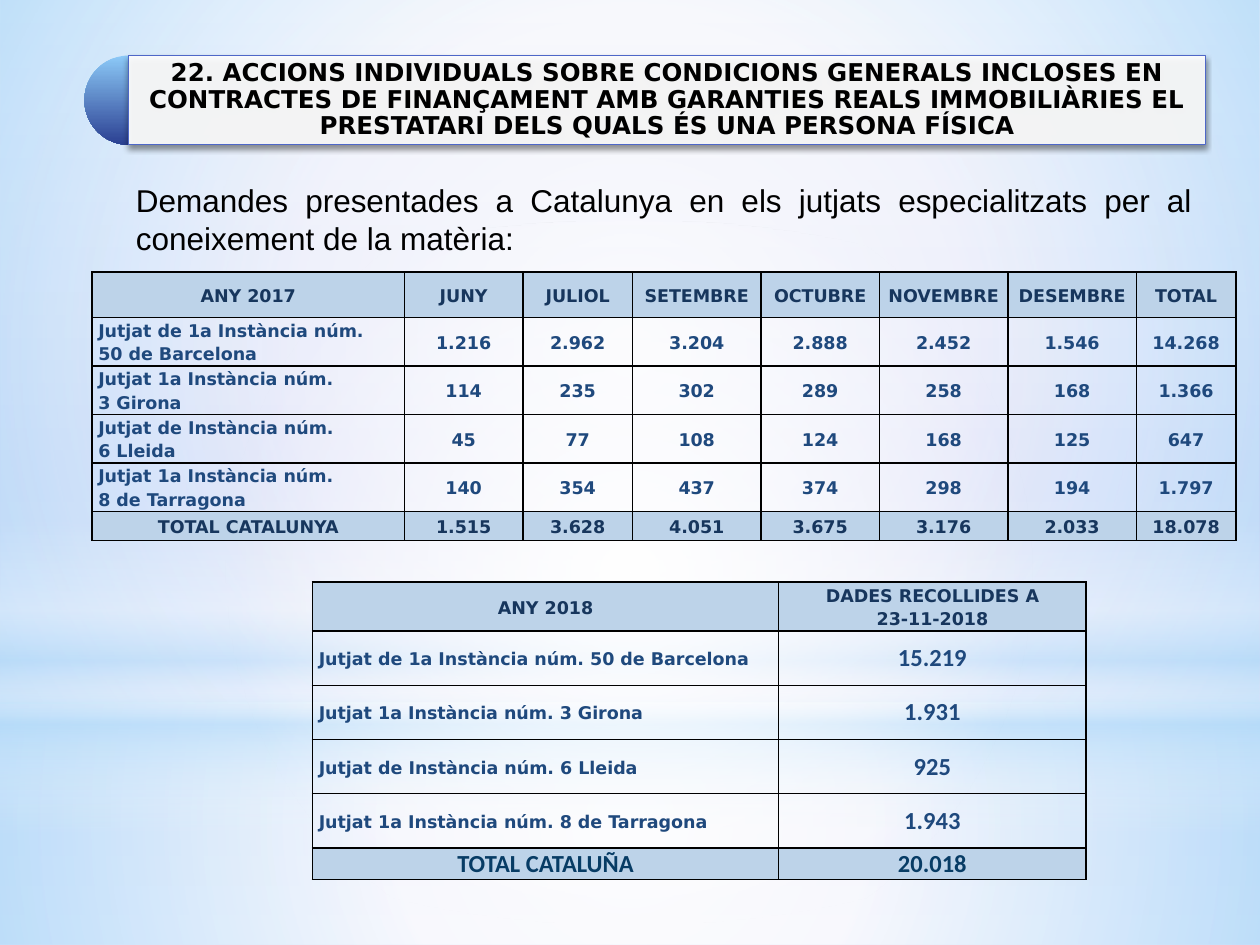
from copy import deepcopy
from dataclasses import dataclass
from typing import NamedTuple, Optional

from lxml.etree import SubElement
from pptx import Presentation
from pptx.dml.color import RGBColor
from pptx.enum.shapes import MSO_SHAPE as Preset
from pptx.enum.text import MSO_ANCHOR as Anchor, MSO_AUTO_SIZE as AutoSize, PP_ALIGN as Align
from pptx.oxml.ns import qn
from pptx.util import Inches, Pt

UNIT = Inches(10) // 1000  # the slide is a grid of 1000 columns by 750 rows


@dataclass(frozen=True)
class Theme:
    label_font: str = "DejaVu Sans"
    body_font: str = "Arial"
    figure_font: str = "Calibri"
    black: str = "000000"
    white: str = "FFFFFF"
    sky: str = "B4DCFA"
    outline: str = "4E67C8"
    header_fill: str = "BDD3E9"
    header_ink: str = "17365D"
    cell_ink: str = "1F497D"
    total_ink: str = "073C65"
    lead_size: float = 18
    title_size: float = 14
    label_size: float = 10


THEME = Theme()


class Box(NamedTuple):
    col: float
    row: float
    cols: float
    rows: float

    def emu(self) -> list[int]:
        return [int(part * UNIT) for part in self]


class Stop(NamedTuple):
    percent: float
    color: str
    alpha: float = 100


class Glow(NamedTuple):
    preset: Preset
    box: Box
    stops: list[Stop]
    angle: Optional[float] = None  # None is a radial gradient


class CellStyle(NamedTuple):
    color: str
    fill: Optional[str] = None
    align: Align = Align.CENTER
    font: str = THEME.label_font
    size: float = THEME.label_size
    spacing: Optional[float] = 1.15
    before: float = 10


HEADER = CellStyle(THEME.header_ink, THEME.header_fill)
COURT = CellStyle(THEME.cell_ink, align=Align.LEFT)
COUNT = CellStyle(THEME.cell_ink)
BIG_COUNT = CellStyle(THEME.cell_ink, font=THEME.figure_font, size=14, spacing=None, before=0)
BIG_TOTAL = BIG_COUNT._replace(color=THEME.total_ink, fill=THEME.header_fill)

W, S = THEME.white, THEME.sky
BACKGROUND = [Stop(0, "EBEEF9"), Stop(50, "C1C7F2"), Stop(100, "E1E3F8")]
GLOWS = [
    Glow(Preset.RECTANGLE, Box(0, 558, 1000, 192), [Stop(0, W, 91), Stop(37, W, 76), Stop(100, S, 79)]),
    Glow(Preset.RECTANGLE, Box(0, 0, 1000, 558), [Stop(0, W, 89), Stop(48, W, 62), Stop(100, S, 79)]),
    Glow(Preset.RECTANGLE, Box(0, 412, 1000, 250),
         [Stop(0, W, 0), Stop(29, W, 30), Stop(45, S, 40), Stop(55, W, 26), Stop(65, S, 60), Stop(100, W, 0)], 90),
    Glow(Preset.OVAL, Box(0, 175, 1000, 558), [Stop(0, W), Stop(56, W, 0)]),
]
TITLE_CAP = Glow(Preset.PIE, Box(67, 44, 71, 71), [Stop(0, "8CC9F7"), Stop(100, "2B4092")], 90)

TITLE = ("22. ACCIONS INDIVIDUALS SOBRE CONDICIONS GENERALS INCLOSES EN CONTRACTES DE FINANÇAMENT "
         "AMB GARANTIES REALS IMMOBILIÀRIES EL PRESTATARI DELS QUALS ÉS UNA PERSONA FÍSICA")
LEAD = "Demandes presentades a Catalunya en els jutjats especialitzats per al coneixement de la matèria:"

YEAR_2017 = [
    ["ANY 2017", "JUNY", "JULIOL", "SETEMBRE", "OCTUBRE", "NOVEMBRE", "DESEMBRE", "TOTAL"],
    ["Jutjat de 1a Instància núm.\n50 de Barcelona", "1.216", "2.962", "3.204", "2.888", "2.452", "1.546", "14.268"],
    ["Jutjat 1a Instància núm.\n3 Girona", "114", "235", "302", "289", "258", "168", "1.366"],
    ["Jutjat de Instància núm.\n6 Lleida", "45", "77", "108", "124", "168", "125", "647"],
    ["Jutjat 1a Instància núm.\n8 de Tarragona", "140", "354", "437", "374", "298", "194", "1.797"],
    ["TOTAL CATALUNYA", "1.515", "3.628", "4.051", "3.675", "3.176", "2.033", "18.078"],
]
YEAR_2018 = [
    ["ANY 2018", "DADES RECOLLIDES A\n23-11-2018"],
    ["Jutjat de 1a Instància núm. 50 de Barcelona", "15.219"],
    ["Jutjat 1a Instància núm. 3 Girona", "1.931"],
    ["Jutjat de Instància núm. 6 Lleida", "925"],
    ["Jutjat 1a Instància núm. 8 de Tarragona", "1.943"],
    ["TOTAL CATALUÑA", "20.018"],
]


def add_color(parent, color: str, alpha: float = 100) -> None:
    node = SubElement(parent, qn("a:srgbClr"), val=color)
    if alpha < 100:
        SubElement(node, qn("a:alpha"), val=str(int(alpha * 1000)))


def paint_gradient(fill, owner, stops: list[Stop], angle: Optional[float]) -> None:
    """Give a fill, which lies inside the owner element, a linear or radial gradient."""
    fill.gradient()
    grad = owner.find(".//" + qn("a:gradFill"))
    for child in list(grad):
        grad.remove(child)
    stop_list = SubElement(grad, qn("a:gsLst"))
    for stop in stops:
        add_color(SubElement(stop_list, qn("a:gs"), pos=str(int(stop.percent * 1000))), stop.color, stop.alpha)
    if angle is None:
        center = SubElement(grad, qn("a:path"), {"path": "circle"})
        SubElement(center, qn("a:fillToRect"), l="50000", t="50000", r="50000", b="50000")
    else:
        SubElement(grad, qn("a:lin"), ang=str(int(angle * 60000)), scaled="0")


def add_glow(slide, glow: Glow):
    shape = slide.shapes.add_shape(glow.preset, *glow.box.emu())
    shape.shadow.inherit = False
    shape.line.fill.background()
    paint_gradient(shape.fill, shape._element.spPr, glow.stops, glow.angle)
    return shape


def write(frame, text: str, *, font: str, size: float, color: str, bold: bool = True,
          align: Align = Align.CENTER, spacing: Optional[float] = None, before: float = 0) -> None:
    paragraph = frame.paragraphs[0]
    paragraph.text = text
    paragraph.alignment = align
    paragraph.line_spacing = spacing
    paragraph.space_before = Pt(before)
    for run in paragraph.runs:
        run.font.name, run.font.size, run.font.bold = font, Pt(size), bold
        run.font.color.rgb = RGBColor.from_string(color)
    for line_break in paragraph._p.findall(qn("a:br")):
        line_break.append(deepcopy(paragraph.runs[0]._r.rPr))


def add_borders(cell) -> None:
    properties = cell._tc.get_or_add_tcPr()
    for side in ("lnL", "lnR", "lnT", "lnB"):
        line = SubElement(properties, qn(f"a:{side}"), w=str(Pt(1)))
        add_color(SubElement(line, qn("a:solidFill")), THEME.black)


def add_grid(slide, left: float, top: float, cols: list[float], rows: list[float],
             texts: list[list[str]], count: CellStyle, totals: CellStyle) -> None:
    """Draw a table with a header row, one row per court and a totals row."""
    box = Box(left, top, sum(cols), sum(rows))
    table = slide.shapes.add_table(len(rows), len(cols), *box.emu()).table
    table.first_row = table.horz_banding = False
    for column, width in zip(table.columns, cols):
        column.width = int(width * UNIT)
    for r, (row, height) in enumerate(zip(table.rows, rows)):
        row.height = int(height * UNIT)
        for c, cell in enumerate(row.cells):
            style = HEADER if r == 0 else totals if r == len(rows) - 1 else count if c else COURT
            add_borders(cell)
            cell.margin_left = cell.margin_right = 5 * UNIT
            cell.margin_top = cell.margin_bottom = 0
            cell.vertical_anchor = Anchor.MIDDLE
            if style.fill:
                cell.fill.solid()
                cell.fill.fore_color.rgb = RGBColor.from_string(style.fill)
            else:
                cell.fill.background()
            write(cell.text_frame, texts[r][c], font=style.font, size=style.size, color=style.color,
                  align=style.align, spacing=style.spacing, before=style.before)


def place_title(slide) -> None:
    title = slide.shapes.title
    title.left, title.top, title.width, title.height = Box(102, 44, 855, 71).emu()
    slide.shapes._spTree.append(title._element)  # in front of the backdrop
    title.fill.solid()
    title.fill.fore_color.rgb = RGBColor.from_string(THEME.white)
    SubElement(title._element.spPr.find(".//" + qn("a:srgbClr")), qn("a:alpha"), val="90000")
    title.line.color.rgb = RGBColor.from_string(THEME.outline)
    title.line.width = Pt(0.75)
    effects = SubElement(title._element.spPr, qn("a:effectLst"))
    shadow = SubElement(effects, qn("a:outerShdw"), blurRad=str(Pt(3.1)), dist=str(Pt(1.8)),
                        dir="5400000", rotWithShape="0")
    add_color(shadow, THEME.black, 45)
    frame = title.text_frame
    frame.word_wrap, frame.auto_size, frame.vertical_anchor = True, AutoSize.NONE, Anchor.MIDDLE
    frame.margin_left = frame.margin_right = frame.margin_top = frame.margin_bottom = 6 * UNIT
    write(frame, TITLE, font=THEME.label_font, size=THEME.title_size, color=THEME.black, spacing=0.9)


def main() -> None:
    deck = Presentation()
    deck.slide_width, deck.slide_height = 1000 * UNIT, 750 * UNIT
    slide = deck.slides.add_slide(deck.slide_layouts[5])
    paint_gradient(slide.background.fill, slide._element, BACKGROUND, 90)
    for glow in GLOWS:
        add_glow(slide, glow)

    lead = slide.shapes.add_textbox(*Box(98, 139, 858, 71).emu()).text_frame
    lead.word_wrap = True
    write(lead, LEAD, font=THEME.body_font, size=THEME.lead_size, color=THEME.black,
          bold=False, align=Align.JUSTIFY)

    cap = add_glow(slide, TITLE_CAP)
    cap.adjustments[0], cap.adjustments[1] = 54, 162
    place_title(slide)

    add_grid(slide, 73, 216, [248, 94, 87, 102, 94, 102, 102, 79], [36] + [38.5] * 4 + [23],
             YEAR_2017, COUNT, HEADER)
    add_grid(slide, 248, 462, [370, 244], [39] + [43] * 4 + [25], YEAR_2018, BIG_COUNT, BIG_TOTAL)
    deck.save("out.pptx")


if __name__ == "__main__":
    main()
